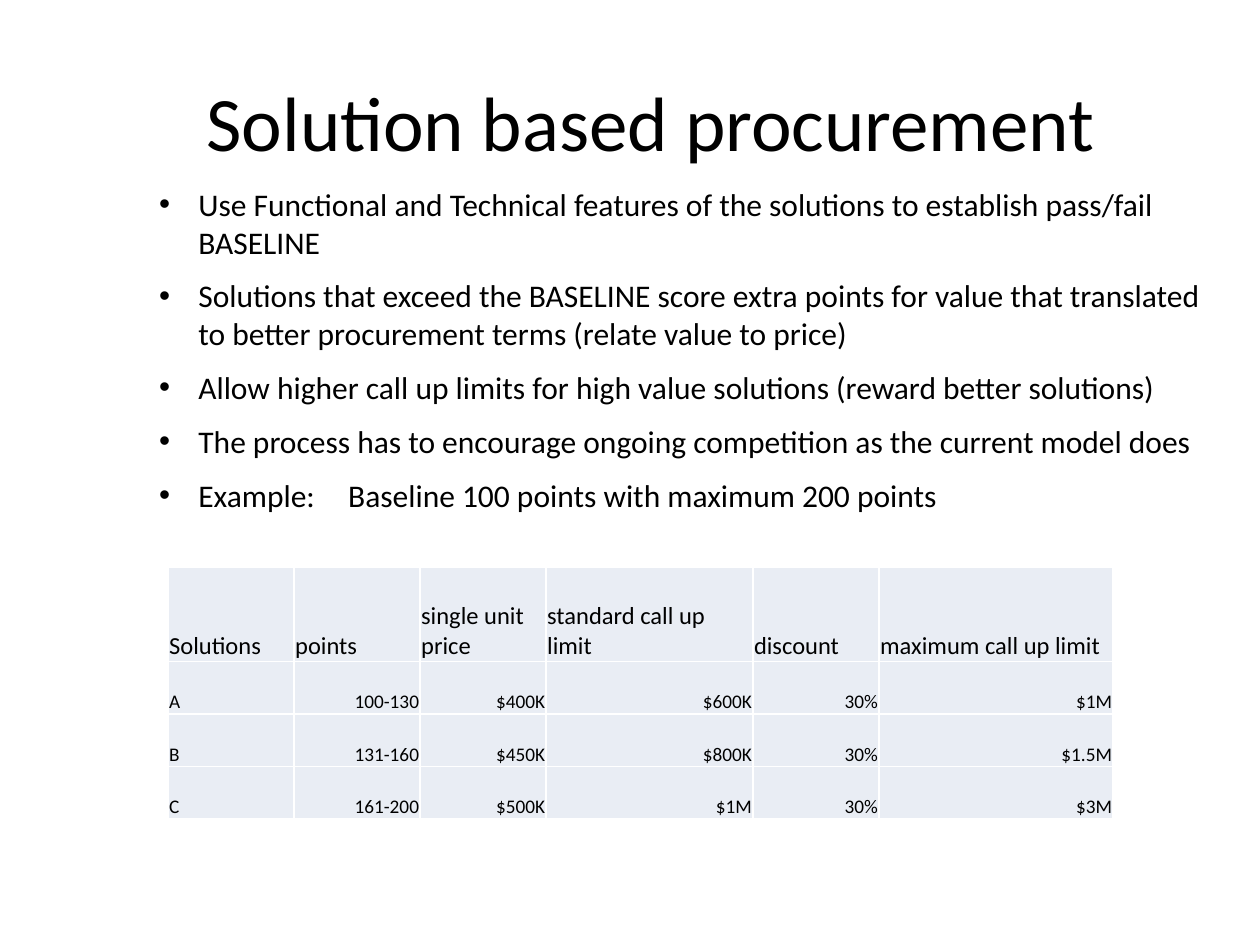
from lxml import etree
from pptx import Presentation
from pptx.dml.color import RGBColor
from pptx.enum.text import MSO_ANCHOR, PP_ALIGN
from pptx.oxml.ns import qn
from pptx.util import Cm, Pt

MIDDLE, BOTTOM = MSO_ANCHOR.MIDDLE, MSO_ANCHOR.BOTTOM
LEFT, CENTER, RIGHT = PP_ALIGN.LEFT, PP_ALIGN.CENTER, PP_ALIGN.RIGHT
COLORS = {"text": "000000", "cell": "E9EDF4", "border": "FFFFFF"}
FONT = "Calibri"


def style_text(paragraph, size, alignment):
    paragraph.alignment = alignment
    for span in paragraph.runs:
        span.font.name = FONT
        span.font.size = Pt(size)
        span.font.color.rgb = RGBColor.from_string(COLORS["text"])


def add_borders(cell):
    properties = cell._tc.get_or_add_tcPr()
    for side in ("lnL", "lnR", "lnT", "lnB"):
        line = etree.SubElement(properties, qn(f"a:{side}"), w=str(Pt(1)))
        fill = etree.SubElement(line, qn("a:solidFill"))
        etree.SubElement(fill, qn("a:srgbClr"), val=COLORS["border"])


deck = Presentation()
deck.slide_width, deck.slide_height = Cm(25.4), Cm(19.05)
page = deck.slides.add_slide(deck.slide_layouts[6])

title_box = page.shapes.add_textbox(Cm(2.33), Cm(1.06), Cm(21.59), Cm(2.75))
title_frame = title_box.text_frame
title_frame.word_wrap = True
title_frame.vertical_anchor = MIDDLE
title_frame.text = "Solution based procurement"
style_text(title_frame.paragraphs[0], 44, CENTER)

bullets = [
    "Use Functional and Technical features of the solutions to establish pass/fail BASELINE",
    "Solutions that exceed the BASELINE score extra points for value that translated "
    "to better procurement terms (relate value to price)",
    "Allow higher call up limits for high value solutions (reward better solutions)",
    "The process has to encourage ongoing competition as the current model does",
    "Example:\tBaseline 100 points with maximum 200 points",
]
body_box = page.shapes.add_textbox(Cm(2.96), Cm(3.6), Cm(21.59), Cm(14.6))
body_frame = body_box.text_frame
body_frame.word_wrap = True
body_frame.text = "\n".join(bullets)
for index, paragraph in enumerate(body_frame.paragraphs):
    properties = paragraph._p.get_or_add_pPr()
    properties.set("marL", str(Cm(0.79)))
    properties.set("indent", str(-Cm(0.79)))
    etree.SubElement(properties, qn("a:buFont"), typeface="Arial")
    etree.SubElement(properties, qn("a:buChar"), char="•")
    paragraph.space_before = Pt(3.2 if index else 0)
    paragraph.space_after = Pt(6)
    style_text(paragraph, 18, LEFT)

rows = [
    ["Solutions", "points", "single unit price", "standard call up limit",
     "discount", "maximum call up limit"],
    ["A", "100-130", "$400K", "$600K", "30%", "$1M"],
    ["B", "131-160", "$450K", "$800K", "30%", "$1.5M"],
    ["C", "161-200", "$500K", "$1M", "30%", "$3M"],
]
column_widths = [2.54, 2.54, 2.54, 4.17, 2.54, 4.72]
row_heights = [1.9, 1.06, 1.06, 1.06]
table = page.shapes.add_table(
    len(rows), len(column_widths), Cm(3.39), Cm(11.43),
    Cm(sum(column_widths)), Cm(sum(row_heights))).table
table.first_row = False
table.horz_banding = False
for column, width in zip(table.columns, column_widths):
    column.width = Cm(width)
for row, height in zip(table.rows, row_heights):
    row.height = Cm(height)
for row_index, values in enumerate(rows):
    for column_index, value in enumerate(values):
        cell = table.cell(row_index, column_index)
        add_borders(cell)
        cell.fill.solid()
        cell.fill.fore_color.rgb = RGBColor.from_string(COLORS["cell"])
        cell.margin_left = cell.margin_right = cell.margin_top = Cm(0.02)
        cell.margin_bottom = 0
        cell.vertical_anchor = BOTTOM
        cell.text_frame.text = value
        is_number = row_index > 0 and column_index > 0
        style_text(cell.text_frame.paragraphs[0], 11 if row_index else 14,
                   RIGHT if is_number else LEFT)

deck.save("out.pptx")
